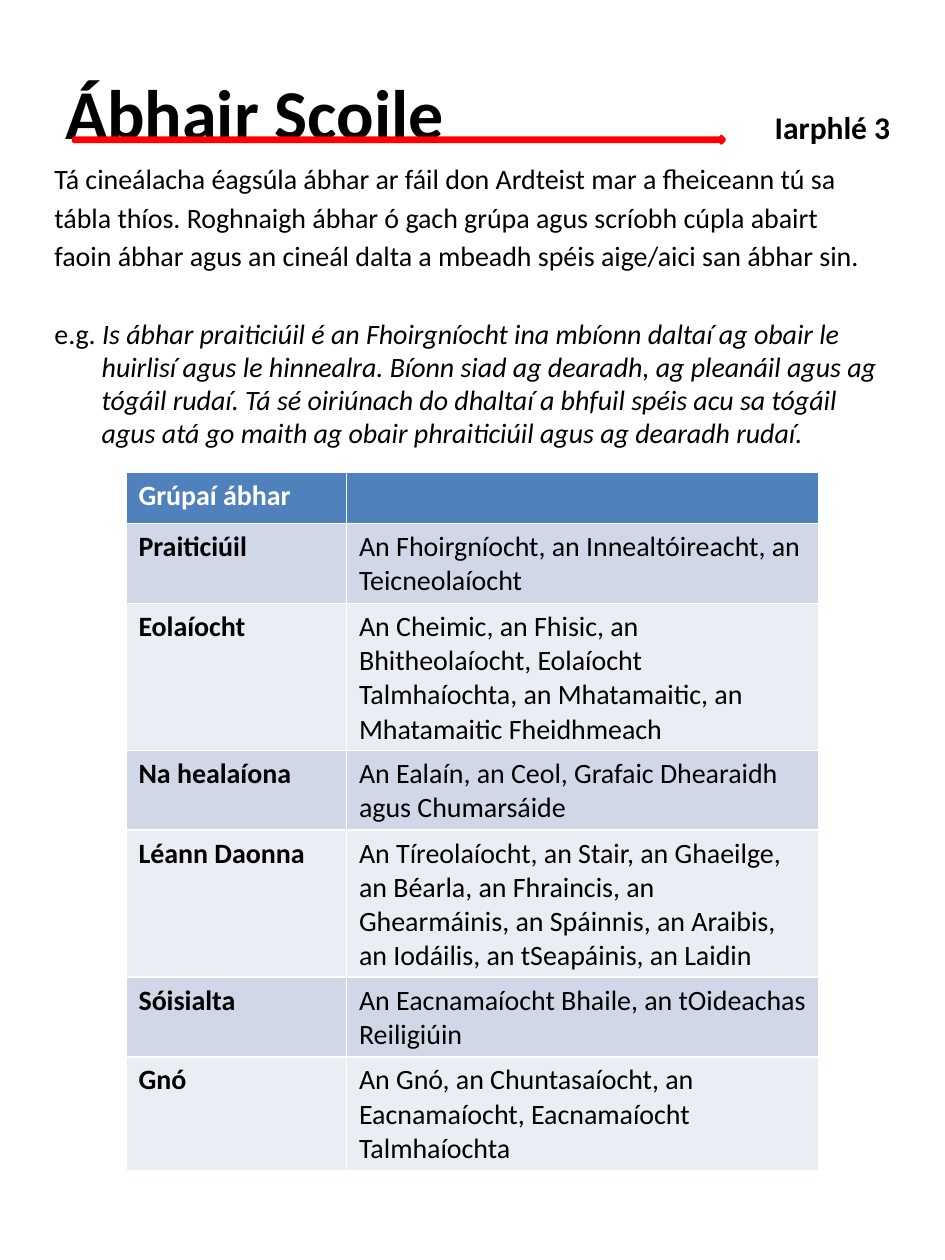
from dataclasses import dataclass

from lxml import etree
from pptx import Presentation
from pptx.dml.color import RGBColor
from pptx.enum import shapes, text
from pptx.oxml import ns
from pptx.util import Pt


@dataclass(frozen=True)
class Theme:
    font: str = "Calibri"
    black: RGBColor = RGBColor(0x00, 0x00, 0x00)
    white: RGBColor = RGBColor(0xFF, 0xFF, 0xFF)
    red: RGBColor = RGBColor(0xFF, 0x00, 0x00)
    header: RGBColor = RGBColor(0x4F, 0x81, 0xBD)
    bands: tuple = (RGBColor(0xD0, 0xD8, 0xE8), RGBColor(0xE9, 0xED, 0xF4))
    title_size: int = 40
    label_size: int = 18
    body_size: int = 16


THEME = Theme()

INTRO = [
    "Tá cineálacha éagsúla ábhar ar fáil don Ardteist mar a fheiceann tú sa",
    "tábla thíos. Roghnaigh ábhar ó gach grúpa agus scríobh cúpla abairt",
    "faoin ábhar agus an cineál dalta a mbeadh spéis aige/aici san ábhar sin.",
]
EXAMPLE = (
    "Is ábhar praiticiúil é an Fhoirgníocht ina mbíonn daltaí ag obair le "
    "huirlisí agus le hinnealra. Bíonn siad ag dearadh, ag pleanáil agus ag "
    "tógáil rudaí. Tá sé oiriúnach do dhaltaí a bhfuil spéis acu sa tógáil "
    "agus atá go maith ag obair phraiticiúil agus ag dearadh rudaí."
)
SUBJECTS = [
    ("Grúpaí ábhar", ""),
    ("Praiticiúil", "An Fhoirgníocht, an Innealtóireacht, an Teicneolaíocht"),
    ("Eolaíocht", "An Cheimic, an Fhisic, an Bhitheolaíocht, Eolaíocht Talmhaíochta, "
                  "an Mhatamaitic, an Mhatamaitic Fheidhmeach"),
    ("Na healaíona", "An Ealaín, an Ceol, Grafaic Dhearaidh agus Chumarsáide"),
    ("Léann Daonna", "An Tíreolaíocht, an Stair, an Ghaeilge, an Béarla, an Fhraincis, "
                     "an Ghearmáinis, an Spáinnis, an Araibis, an Iodáilis, "
                     "an tSeapáinis, an Laidin"),
    ("Sóisialta", "An Eacnamaíocht Bhaile, an tOideachas Reiligiúin"),
    ("Gnó", "An Gnó, an Chuntasaíocht, an Eacnamaíocht, Eacnamaíocht Talmhaíochta"),
]


def format_font(font, size, color=THEME.black, bold=False, italic=False):
    font.name = THEME.font
    font.size = Pt(size)
    font.color.rgb = color
    font.bold = bold
    font.italic = italic


def add_tab_stop(paragraph, position):
    properties = paragraph._p.get_or_add_pPr()
    tabs = etree.SubElement(properties, ns.qn("a:tabLst"))
    etree.SubElement(tabs, ns.qn("a:tab"), pos=str(position), algn="l")


def add_title(slide, title, label):
    shape = slide.shapes.title
    shape.left, shape.top, shape.width, shape.height = Pt(30), Pt(30), Pt(486), Pt(67)
    frame = shape.text_frame
    frame.auto_size = text.MSO_AUTO_SIZE.NONE
    frame.vertical_anchor = text.MSO_ANCHOR.MIDDLE
    paragraph = frame.paragraphs[0]
    paragraph.alignment = text.PP_ALIGN.LEFT
    add_tab_stop(paragraph, Pt(405.5))
    for words, size in ((title + "\t", THEME.title_size), (label, THEME.label_size)):
        run = paragraph.add_run()
        run.text = words
        format_font(run.font, size, bold=True)


def add_arrow(slide):
    shape = slide.shapes.add_shape(
        shapes.MSO_SHAPE.RIGHT_ARROW, Pt(42), Pt(78), Pt(372), Pt(3.75))
    shape.shadow.inherit = False
    shape.fill.solid()
    shape.fill.fore_color.rgb = THEME.red
    shape.line.color.rgb = THEME.red
    shape.line.width = Pt(2)


def add_body(slide):
    box = slide.shapes.add_textbox(Pt(24), Pt(90), Pt(486), Pt(180))
    frame = box.text_frame
    frame.word_wrap = True
    frame.text = "\n".join(INTRO + ["e.g. "])
    for paragraph in frame.paragraphs:
        paragraph.space_before = Pt(3.2)
        paragraph.line_spacing = 0.98
        properties = paragraph._p.get_or_add_pPr()
        properties.set("marL", str(Pt(27)))
        properties.set("indent", str(Pt(-27)))
        format_font(paragraph.runs[0].font, THEME.body_size)
    # The example stands apart from the introduction
    example = frame.paragraphs[-1]
    example.space_before = Pt(25.5)
    run = example.add_run()
    run.text = EXAMPLE
    format_font(run.font, THEME.body_size, italic=True)


def add_subject_table(slide):
    row_height = Pt(29.2)
    table = slide.shapes.add_table(
        len(SUBJECTS), 2, Pt(72), Pt(270), Pt(396), row_height * len(SUBJECTS)).table
    table.columns[0].width, table.columns[1].width = Pt(126), Pt(270)
    for row, subject in enumerate(SUBJECTS):
        is_header = row == 0
        fill = THEME.header if is_header else THEME.bands[(row - 1) % 2]
        color = THEME.white if is_header else THEME.black
        for column, words in enumerate(subject):
            cell = table.cell(row, column)
            cell.fill.solid()
            cell.fill.fore_color.rgb = fill
            cell.text_frame.text = words
            format_font(cell.text_frame.paragraphs[0].font, THEME.body_size)
            for run in cell.text_frame.paragraphs[0].runs:
                format_font(run.font, THEME.body_size, color, bold=column == 0)


def main():
    presentation = Presentation()
    presentation.slide_width, presentation.slide_height = Pt(540), Pt(720)
    slide = presentation.slides.add_slide(presentation.slide_layouts[5])

    # Heading and its underline
    add_title(slide, "Ábhair Scoile", "Iarphlé 3")
    add_arrow(slide)

    # Task, example and subject groups
    add_body(slide)
    add_subject_table(slide)

    presentation.save("out.pptx")


if __name__ == "__main__":
    main()
